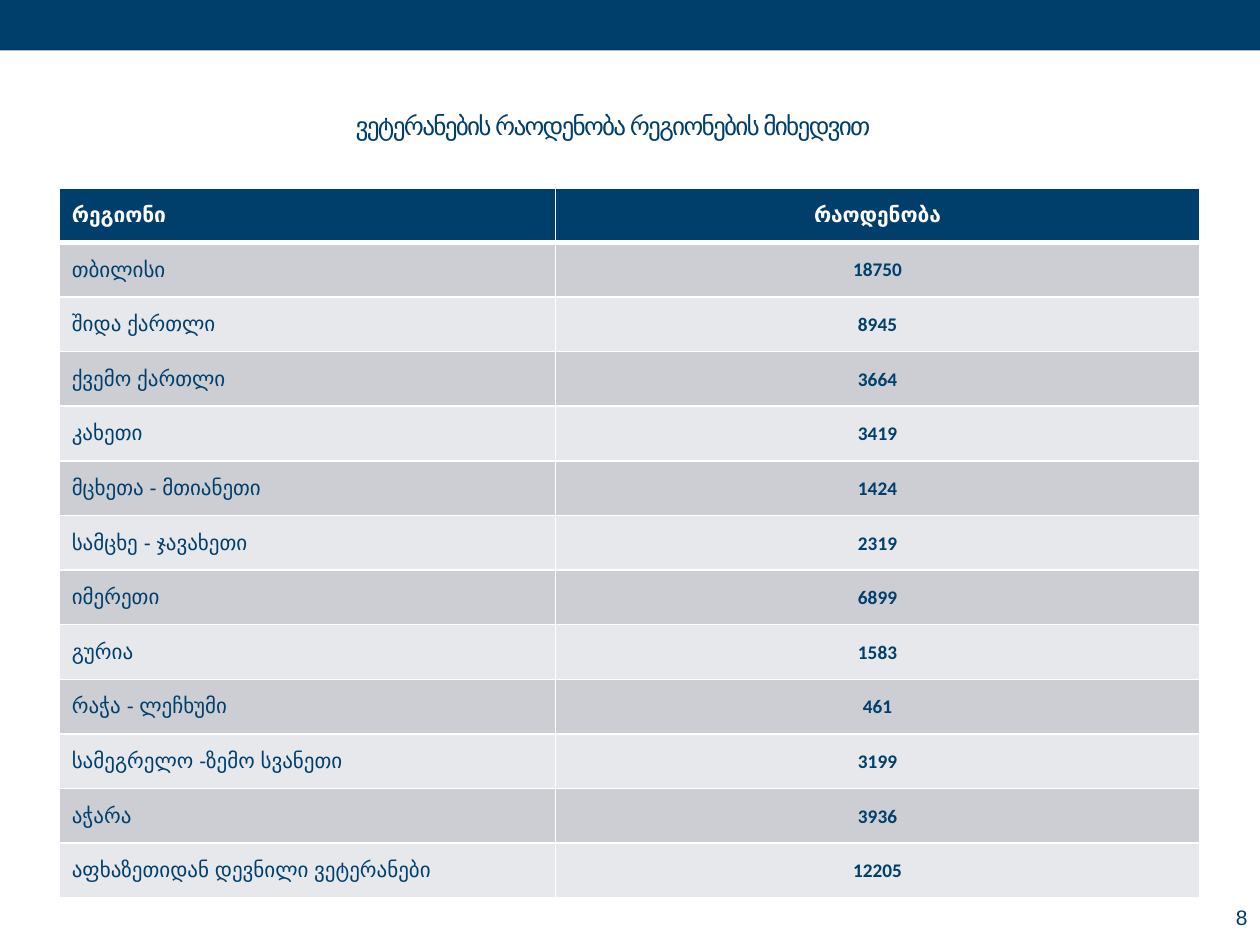
from lxml import etree
from pptx import Presentation
from pptx import util as u
from pptx.dml.color import RGBColor
from pptx.enum import shapes, text
from pptx.oxml.ns import qn

WIDE, HIGH = 10, 7.5
INK = {"navy": "003E6C", "white": "FFFFFF", "dark": "CCCED4", "light": "E7E8EB"}
COLS = (3.94, 5.11)
HEAD = ("რეგიონი", "რაოდენობა")
ROWS = (
    ("თბილისი", 18750),
    ("შიდა ქართლი", 8945),
    ("ქვემო ქართლი", 3664),
    ("კახეთი", 3419),
    ("მცხეთა - მთიანეთი", 1424),
    ("სამცხე - ჯავახეთი", 2319),
    ("იმერეთი", 6899),
    ("გურია", 1583),
    ("რაჭა - ლეჩხუმი", 461),
    ("სამეგრელო -ზემო სვანეთი", 3199),
    ("აჭარა", 3936),
    ("აფხაზეთიდან დევნილი ვეტერანები", 12205),
)
LEFT, MID, RIGHT = text.PP_ALIGN.LEFT, text.PP_ALIGN.CENTER, text.PP_ALIGN.RIGHT


def color(name):
    return RGBColor.from_string(INK[name])


def paint(item, name):
    item.fill.solid()
    item.fill.fore_color.rgb = color(name)


def write(frame, words, size, align, ink="navy", face="Arial", bold=False):
    frame.text = words
    par = frame.paragraphs[0]
    par.alignment = align
    font = par.font
    font.size, font.name, font.bold = u.Pt(size), face, bold
    font.color.rgb = color(ink)


def add_band(slide):
    band = slide.shapes.add_shape(
        shapes.MSO_SHAPE.RECTANGLE, 0, 0, u.Inches(WIDE), u.Inches(0.4))
    band.shadow.inherit = False
    paint(band, "navy")
    band.line.fill.background()


def add_label(slide, box, words, size, align):
    frame = slide.shapes.add_textbox(*map(u.Inches, box)).text_frame
    frame.word_wrap = True
    frame.vertical_anchor = text.MSO_ANCHOR.MIDDLE
    write(frame, words, size, align)
    return frame


def add_title(slide):
    frame = add_label(slide, (2.51, 0.8, 4.71, 0.61),
                      "ვეტერანების რაოდენობა რეგიონების მიხედვით", 14.4, MID)
    frame.margin_bottom = u.Inches(0.27)
    frame.paragraphs[0].runs[0].font._element.set("spc", "-100")


def edge(cell, base):
    """Draw white borders round a cell, the bottom one base points wide."""
    props = cell._tc.get_or_add_tcPr()
    for spot, (side, width) in enumerate(
            (("lnL", 1), ("lnR", 1), ("lnT", 1), ("lnB", base))):
        line = etree.Element(qn("a:" + side), w=str(u.Pt(width)))
        fill = etree.SubElement(line, qn("a:solidFill"))
        etree.SubElement(fill, qn("a:srgbClr"), val=INK["white"])
        props.insert(spot, line)


def style(cell, fill, base=1):
    cell.vertical_anchor = text.MSO_ANCHOR.MIDDLE
    paint(cell, fill)
    edge(cell, base)


def add_grid(slide):
    count = len(ROWS) + 1
    high = u.Inches(5.64)
    grid = slide.shapes.add_table(
        count, len(COLS), u.Inches(0.47), u.Inches(1.49),
        u.Inches(sum(COLS)), high).table
    for col, wide in zip(grid.columns, COLS):
        col.width = u.Inches(wide)
    for row in grid.rows:
        row.height = high // count

    for col, (words, align) in enumerate(zip(HEAD, (LEFT, MID))):
        cell = grid.cell(0, col)
        style(cell, "navy", 3)
        write(cell.text_frame, words, 12, align, "white", bold=True)

    for row, (region, total) in enumerate(ROWS, 1):
        name, value = grid.cell(row, 0), grid.cell(row, 1)
        for cell in (name, value):
            style(cell, "dark" if row % 2 else "light")
        write(name.text_frame, region, 12, LEFT)
        write(value.text_frame, str(total), 11, MID, face="Calibri", bold=True)
        value.margin_left = value.margin_right = value.margin_top = u.Inches(0.01)
        value.margin_bottom = 0


def main():
    deck = Presentation()
    deck.slide_width, deck.slide_height = u.Inches(WIDE), u.Inches(HIGH)
    slide = deck.slides.add_slide(deck.slide_layouts[6])
    add_band(slide)
    add_title(slide)
    add_label(slide, (8.83, 7.1, 1.17, 0.36), "8", 12, RIGHT)
    add_grid(slide)
    deck.save("out.pptx")


if __name__ == "__main__":
    main()
